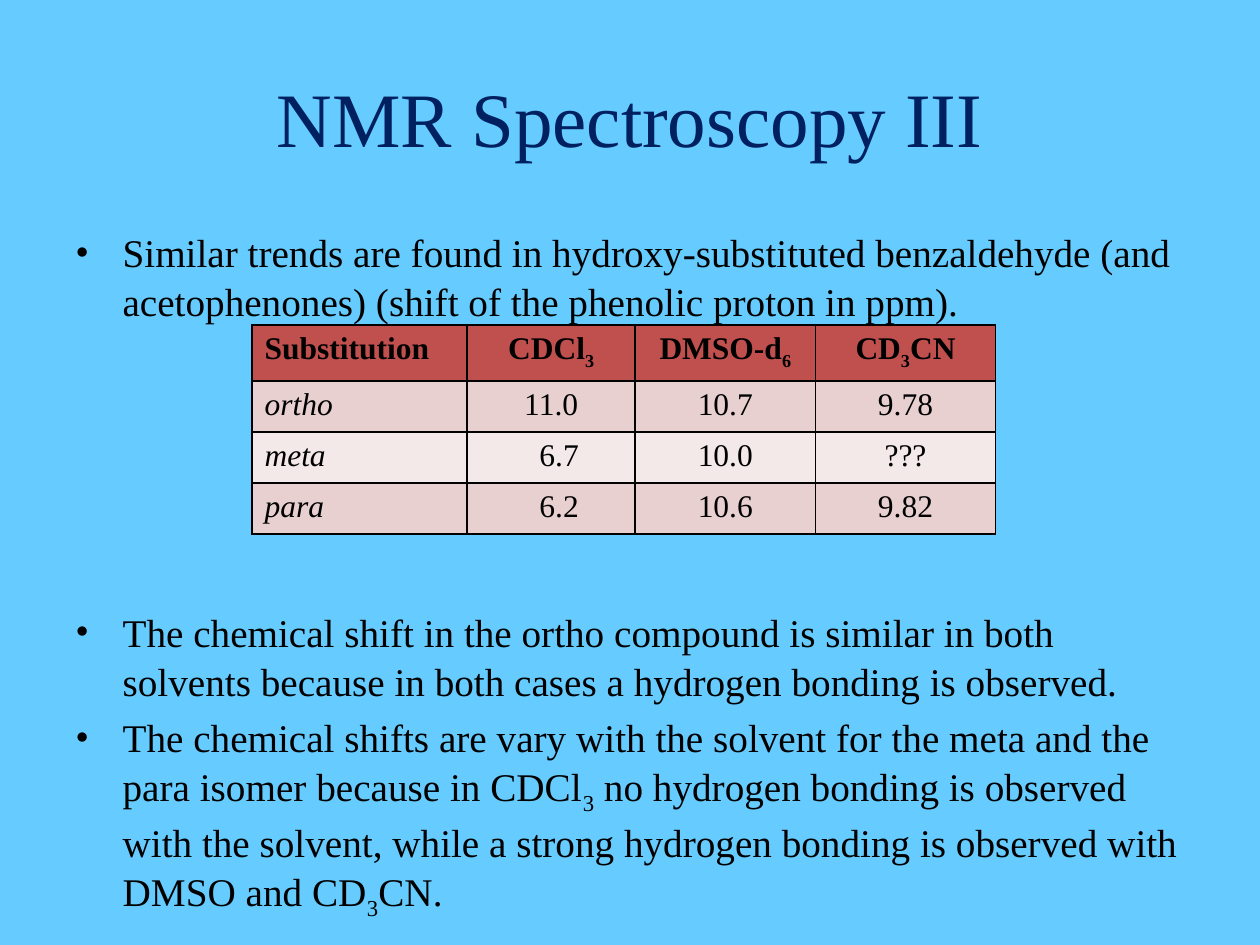
from dataclasses import dataclass

from lxml import etree
from pptx import Presentation
from pptx.dml.color import RGBColor
from pptx.enum.text import MSO_ANCHOR, PP_ALIGN
from pptx.oxml.ns import qn
from pptx.util import Pt

CENTER, LEFT = PP_ALIGN.CENTER, PP_ALIGN.LEFT
MIDDLE, TOP = MSO_ANCHOR.MIDDLE, MSO_ANCHOR.TOP
FONT = "Times New Roman"
COLORS = {
    "background": "66CCFF",
    "title": "002060",
    "text": "000000",
    "header": "C0504D",
    "band_dark": "E8D0D0",
    "band_light": "F4E9E9",
}
SUB = "~"  # encloses subscript text
BULLET_INDENT = 27
CELL_MARGIN = 7.2
DIGIT_WIDTH = 9  # one digit at the table's 18 pt size


@dataclass
class Bullet:
    text: str
    space_before: float


@dataclass
class Row:
    values: list[str]
    fill: str
    header: bool = False


BULLETS = [
    Bullet("Similar trends are found in hydroxy-substituted benzaldehyde (and "
           "acetophenones) (shift of the phenolic proton in ppm).", 0),
    Bullet("The chemical shift in the ortho compound is similar in both solvents "
           "because in both cases a hydrogen bonding is observed.", 161),
    Bullet("The chemical shifts are vary with the solvent for the meta and the para "
           "isomer because in CDCl~3~ no hydrogen bonding is observed with the "
           "solvent, while a strong hydrogen bonding is observed with DMSO and "
           "CD~3~CN.", 4.5),
]
ROWS = [
    Row(["Substitution", "CDCl~3~", "DMSO-d~6~", "CD~3~CN"], "header", True),
    Row(["ortho", "11.0", "10.7", "9.78"], "band_dark"),
    Row(["meta", "6.7", "10.0", "???"], "band_light"),
    Row(["para", "6.2", "10.6", "9.82"], "band_dark"),
]
COLUMN_WIDTHS = [123, 96, 103, 103]
ROW_HEIGHT = 29.2


def rgb(name: str) -> RGBColor:
    return RGBColor.from_string(COLORS[name])


def write(p, text: str, size: float, color: str = "text",
          bold: bool = False, italic: bool = False) -> None:
    """Fill a paragraph, lowering the parts enclosed in SUB marks."""
    for i, part in enumerate(text.split(SUB)):
        if not part:
            continue
        r = p.add_run()
        r.text = part
        r.font.name, r.font.size = FONT, Pt(size)
        r.font.bold, r.font.italic = bold, italic
        r.font.color.rgb = rgb(color)
        if i % 2:
            r.font._element.set("baseline", "-25000")


def add_text_frame(s, left: float, top: float, width: float, height: float, anchor):
    tf = s.shapes.add_textbox(Pt(left), Pt(top), Pt(width), Pt(height)).text_frame
    tf.word_wrap = True
    tf.vertical_anchor = anchor
    return tf


def add_bullet(p, bullet: Bullet) -> None:
    p.line_spacing = 1.04
    p.space_before = Pt(bullet.space_before)
    pPr = p._p.get_or_add_pPr()
    pPr.set("marL", str(Pt(BULLET_INDENT)))
    pPr.set("indent", str(-Pt(BULLET_INDENT)))
    etree.SubElement(pPr, qn("a:buFont"), typeface=FONT)
    etree.SubElement(pPr, qn("a:buChar"), char="•")
    write(p, bullet.text, 22.4)


def add_borders(cell) -> None:
    tcPr = cell._tc.get_or_add_tcPr()
    for i, side in enumerate(("a:lnL", "a:lnR", "a:lnT", "a:lnB")):
        ln = etree.Element(qn(side), w=str(Pt(1)))
        fill = etree.SubElement(ln, qn("a:solidFill"))
        etree.SubElement(fill, qn("a:srgbClr"), val=COLORS["text"])
        tcPr.insert(i, ln)


def fill_cell(cell, text: str, row: Row, column: int) -> None:
    cell.fill.solid()
    cell.fill.fore_color.rgb = rgb(row.fill)
    add_borders(cell)
    # Shift one-digit values so that decimal points line up
    one_digit = text.find(".") == 1 and column == 1
    cell.margin_left = Pt(CELL_MARGIN + (DIGIT_WIDTH if one_digit else 0))
    p = cell.text_frame.paragraphs[0]
    p.alignment = CENTER if column else LEFT
    write(p, text, 18, bold=row.header, italic=not (row.header or column))


def add_shift_table(s, left: float, top: float) -> None:
    table = s.shapes.add_table(
        len(ROWS), len(COLUMN_WIDTHS), Pt(left), Pt(top),
        Pt(sum(COLUMN_WIDTHS)), Pt(ROW_HEIGHT * len(ROWS))).table
    table.horz_banding = False
    for column, width in zip(table.columns, COLUMN_WIDTHS):
        column.width = Pt(width)
    for i, row in enumerate(ROWS):
        table.rows[i].height = Pt(ROW_HEIGHT)
        for j, text in enumerate(row.values):
            fill_cell(table.cell(i, j), text, row, j)


def main() -> None:
    prs = Presentation()
    prs.slide_width, prs.slide_height = Pt(720), Pt(540)
    s = prs.slides.add_slide(prs.slide_layouts[6])
    s.background.fill.solid()
    s.background.fill.fore_color.rgb = rgb("background")

    # Title
    p = add_text_frame(s, 36, 21.6, 648, 90, MIDDLE).paragraphs[0]
    p.alignment = CENTER
    write(p, "NMR Spectroscopy III", 44, "title")

    # Bullets, with room for the table after the first
    tf = add_text_frame(s, 36, 126, 648, 356.4, TOP)
    for i, bullet in enumerate(BULLETS):
        add_bullet(tf.add_paragraph() if i else tf.paragraphs[0], bullet)

    # Chemical shifts
    add_shift_table(s, 144, 185.8)

    prs.save("out.pptx")


if __name__ == "__main__":
    main()
